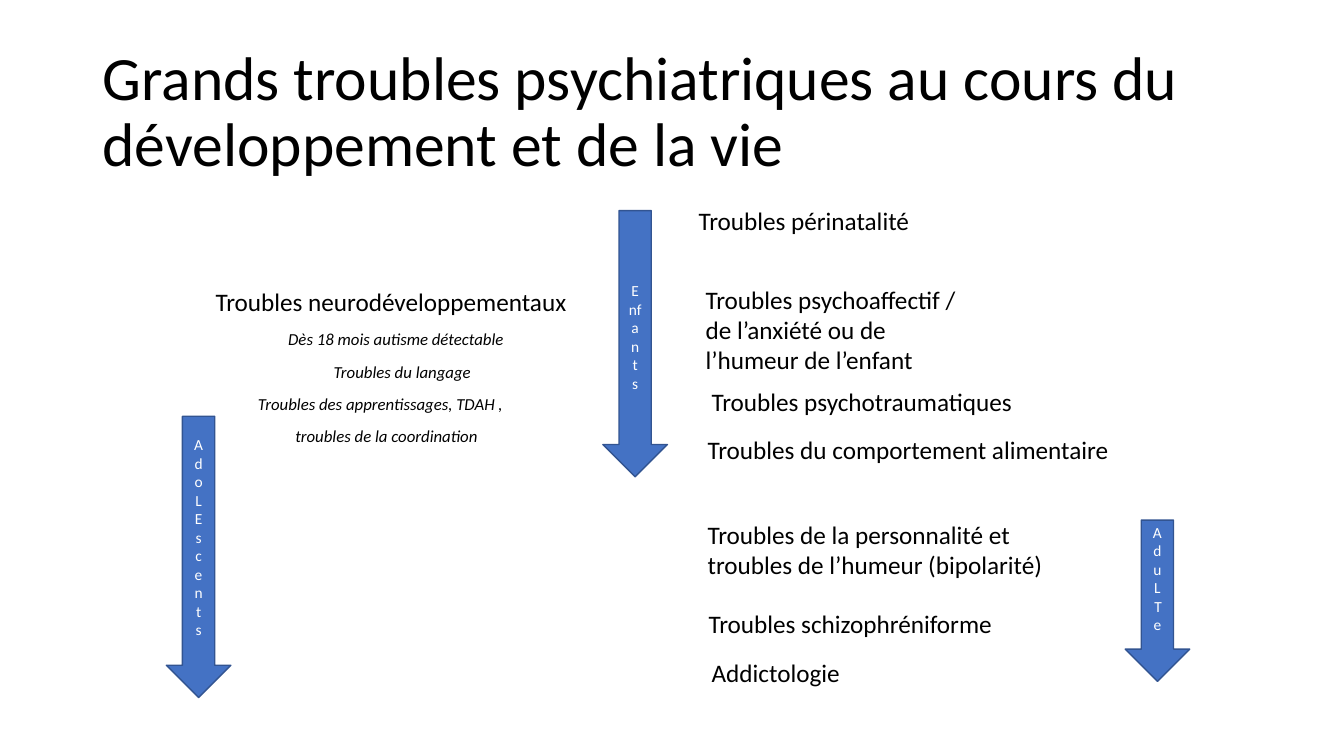
from pptx import Presentation
from pptx.dml.color import RGBColor
from pptx.enum.shapes import MSO_SHAPE
from pptx.enum.text import MSO_ANCHOR, PP_ALIGN
from pptx.util import Pt

PX = 9144
BLACK = RGBColor(0x00, 0x00, 0x00)
WHITE = RGBColor(0xFF, 0xFF, 0xFF)
BLUE = RGBColor(0x44, 0x72, 0xC4)
DARK_BLUE = RGBColor(0x32, 0x54, 0x91)

prs = Presentation()
prs.slide_width = 1333 * PX
prs.slide_height = 750 * PX
slide = prs.slides.add_slide(prs.slide_layouts[6])


def add_box(left, top, width, height):
    frame = slide.shapes.add_textbox(left * PX, top * PX, width * PX, height * PX).text_frame
    frame.word_wrap = True
    return frame


def add_run(paragraph, text, size, color=BLACK, italic=False):
    run = paragraph.add_run()
    run.text = text
    run.font.name = "Calibri"
    run.font.size = Pt(size)
    run.font.color.rgb = color
    run.font.italic = italic


title = add_box(92, 40, 1150, 145)
title.vertical_anchor = MSO_ANCHOR.MIDDLE
title.paragraphs[0].line_spacing = 0.9
add_run(title.paragraphs[0],
        "Grands troubles psychiatriques au cours du développement et de la vie", 44)

neurodevelopment = add_box(204, 283, 380, 170)
heading = neurodevelopment.paragraphs[0]
heading.line_spacing = 0.9
add_run(heading, "Troubles neurodéveloppementaux", 18)
for indent, example in [
    (72, "Dès 18 mois autisme détectable"),
    (117, "Troubles du langage"),
    (42, "Troubles des apprentissages, TDAH ,"),
    (79, "troubles de la coordination"),
]:
    line = neurodevelopment.add_paragraph()
    line.line_spacing = 0.9
    line.space_before = Pt(10)
    line._p.get_or_add_pPr().set("marL", str(indent * PX))
    add_run(line, example, 12, italic=True)

for left, top, width, height, disorder in [
    (683, 199, 275, 40, "Troubles périnatalité"),
    (690, 277, 275, 101, "Troubles psychoaffectif / de l’anxiété ou de l’humeur de l’enfant"),
    (696, 378, 430, 40, "Troubles psychotraumatiques"),
    (692, 426, 477, 40, "Troubles du comportement alimentaire"),
    (692, 510, 400, 71, "Troubles de la personnalité et troubles de l’humeur (bipolarité)"),
    (693, 599, 333, 40, "Troubles schizophréniforme"),
    (696, 647, 333, 40, "Addictologie"),
]:
    add_run(add_box(left, top, width, height).paragraphs[0], disorder, 18)

for left, top, height, inset, syllables in [
    (598, 209, 264, 70, ["Enfant", "s"]),
    (165, 413, 279, 19, ["Ado", "L", "Escent", "s"]),
    (1116, 516, 160, 3, ["Adu", "L", "Te"]),
]:
    age_arrow = slide.shapes.add_shape(
        MSO_SHAPE.DOWN_ARROW, left * PX, top * PX, 64 * PX, height * PX)
    age_arrow.shadow.inherit = False
    age_arrow.fill.solid()
    age_arrow.fill.fore_color.rgb = BLUE
    age_arrow.line.color.rgb = DARK_BLUE
    age_arrow.line.width = Pt(1)
    age_label = age_arrow.text_frame
    age_label.word_wrap = True
    age_label.vertical_anchor = MSO_ANCHOR.TOP
    age_label.margin_top = inset * PX
    age_label.margin_bottom = 0
    for index, syllable in enumerate(syllables):
        line = age_label.add_paragraph() if index else age_label.paragraphs[0]
        line.alignment = PP_ALIGN.CENTER
        add_run(line, syllable, 11, WHITE)

prs.save("out.pptx")
